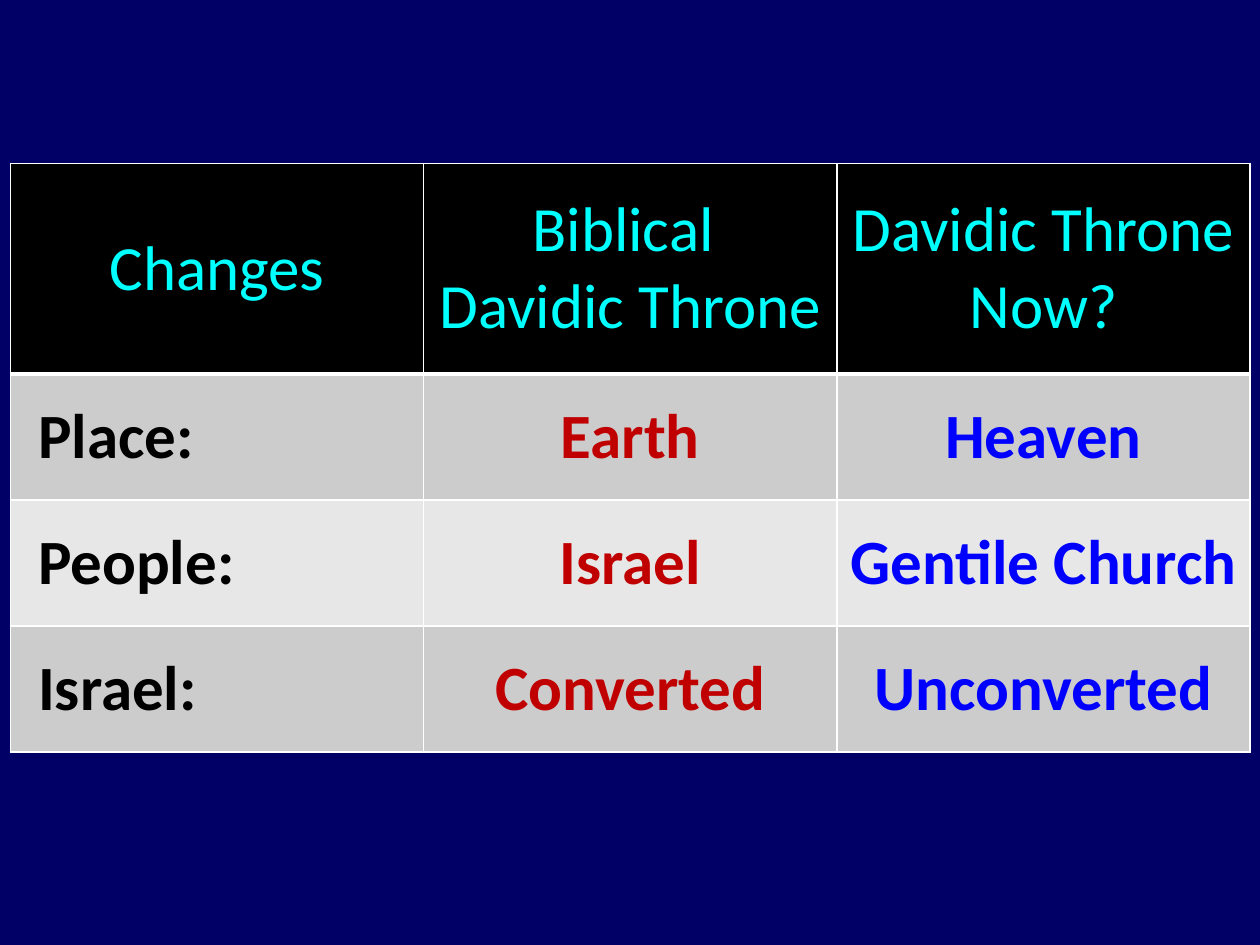
from dataclasses import dataclass

from lxml import etree
from pptx import Presentation
from pptx.dml.color import RGBColor
from pptx.enum.text import MSO_ANCHOR, PP_ALIGN
from pptx.oxml.ns import qn
from pptx.table import _Cell
from pptx.util import Cm, Pt

LEFT, CENTER = PP_ALIGN.LEFT, PP_ALIGN.CENTER
MIDDLE = MSO_ANCHOR.MIDDLE

COL_W = Cm(8.33)
HEAD_H, ROW_H = Cm(4.24), Cm(2.54)
LABEL_MARGIN = Cm(0.56)

HEADERS = ("Changes", "Biblical \nDavidic Throne", "Davidic Throne Now?")
ROWS = (
    ("Place:", "Earth", "Heaven"),
    ("People:", "Israel", "Gentile Church"),
    ("Israel:", "Converted", "Unconverted"),
)
BODY_COLORS = ("000000", "C00000", "0000FF")
BAND_FILLS = ("CCCCCC", "E7E7E7")


@dataclass
class CellStyle:
    fill: str
    color: str
    bold: bool = False
    align: PP_ALIGN = CENTER
    top: float = 1
    bottom: float = 1


def rgb(value: str) -> RGBColor:
    return RGBColor.from_string(value)


def set_border(cell: _Cell, side: str, width: float) -> None:
    tc_pr = cell._tc.get_or_add_tcPr()
    ln = etree.SubElement(tc_pr, qn(f"a:ln{side}"), w=str(Pt(width)))
    fill = etree.SubElement(ln, qn("a:solidFill"))
    etree.SubElement(fill, qn("a:srgbClr"), val="FFFFFF")


def fill_cell(cell: _Cell, text: str, style: CellStyle) -> None:
    borders = {"L": 1, "R": 1, "T": style.top, "B": style.bottom}
    for side, width in borders.items():
        set_border(cell, side, width)
    cell.fill.solid()
    cell.fill.fore_color.rgb = rgb(style.fill)
    cell.vertical_anchor = MIDDLE
    if style.align == LEFT:
        cell.margin_left = LABEL_MARGIN
    cell.text = text
    for p in cell.text_frame.paragraphs:
        p.alignment = style.align
        p.font.name = "Calibri"
        p.font.size = Pt(36)
        p.font.bold = style.bold
        p.font.color.rgb = rgb(style.color)


def main() -> None:
    prs = Presentation()
    prs.slide_width, prs.slide_height = Cm(25.4), Cm(19.05)
    s = prs.slides.add_slide(prs.slide_layouts[6])
    s.background.fill.solid()
    s.background.fill.fore_color.rgb = rgb("000066")

    n_rows, n_cols = len(ROWS) + 1, len(HEADERS)
    frame = s.shapes.add_table(
        n_rows, n_cols, Cm(0.21), Cm(3.3),
        COL_W * n_cols, HEAD_H + ROW_H * len(ROWS),
    )
    table = frame.table
    for col in table.columns:
        col.width = COL_W
    for i, row in enumerate(table.rows):
        row.height = ROW_H if i else HEAD_H

    for c, text in enumerate(HEADERS):
        fill_cell(table.cell(0, c), text, CellStyle("000000", "00FFFF", bottom=3))
    for r, row in enumerate(ROWS):
        for c, text in enumerate(row):
            style = CellStyle(
                BAND_FILLS[r % 2], BODY_COLORS[c], bold=True,
                align=CENTER if c else LEFT, top=1 if r else 3,
            )
            fill_cell(table.cell(r + 1, c), text, style)

    prs.save("out.pptx")


if __name__ == "__main__":
    main()
